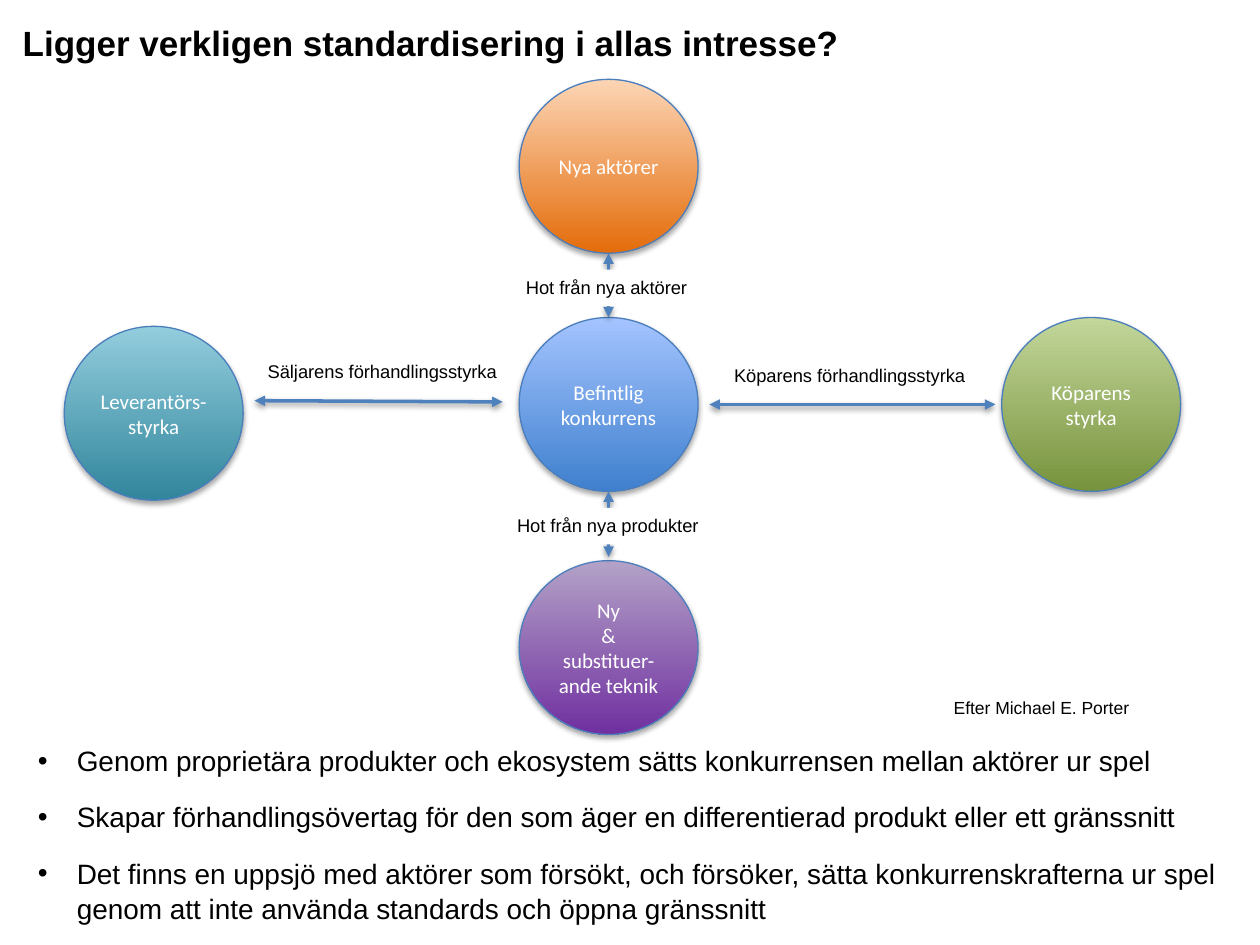
import pptx
import pptx.util
import pptx.oxml
import pptx.oxml.ns
import pptx.dml.color
import pptx.enum.shapes
import pptx.enum.text
import lxml.etree

HUES = {
    "ink": "000000", "white": "FFFFFF", "edge": "4B7EBC", "arrow": "4F81BD",
    "blue": ("A4C4FF", "3F80CE"), "green": ("C3D69B", "77933C"),
    "teal": ("93CDDD", "31859C"), "plum": ("B3A2C7", "7030A0"),
    "rust": ("FCD5B5", "E46C0A"),
}
COLS, ROWS = 100, 75
WIDE, HIGH = pptx.util.Inches(10), pptx.util.Inches(7.5)
CIRC = (14.2, 13.8)  # circle size in columns and rows

# Text formats
HEAD = {"name": "Arial", "size": 20, "bold": True, "hue": "ink"}
LIST = {"name": "Arial", "size": 16, "hue": "ink"}
NODE = {"name": "Calibri", "size": 12, "hue": "white"}
NOTE = {"name": "Arial", "size": 10.5, "hue": "ink"}
FINE = {**NOTE, "size": 10}

TOP = pptx.enum.text.MSO_ANCHOR.TOP
MID = pptx.enum.text.MSO_ANCHOR.MIDDLE
LEFT = pptx.enum.text.PP_ALIGN.LEFT
CENTER = pptx.enum.text.PP_ALIGN.CENTER
SHAPE = pptx.enum.shapes.MSO_SHAPE


def rgb(code):
    return pptx.dml.color.RGBColor.from_string(code)


def grid(col, row, *size):
    """Turn columns and rows into lengths."""
    pairs = zip((col, row, *size), (WIDE / COLS, HIGH / ROWS) * 2)
    return [round(count * unit) for count, unit in pairs]


def style(font, form):
    for key, value in form.items():
        if key == "hue":
            font.color.rgb = rgb(HUES[value])
        else:
            setattr(font, key, pptx.util.Pt(value) if key == "size" else value)


def write(shape, lines, form, align, anchor, pad=(0.1, 0.05)):
    frame = shape.text_frame
    frame.text = "\n".join(lines)
    sides = {"margin_left": pad[0], "margin_right": pad[0],
             "margin_top": pad[1], "margin_bottom": pad[1]}
    for key, value in sides.items():
        setattr(frame, key, pptx.util.Inches(value))
    frame.word_wrap = True
    frame.auto_size = pptx.enum.text.MSO_AUTO_SIZE.NONE
    frame.vertical_anchor = anchor
    for para in frame.paragraphs:
        para.alignment = align
        para.space_before = pptx.util.Pt(0)
        style(para.font, form)
    return frame.paragraphs


def place(shape, box):
    for key, value in zip(("left", "top", "width", "height"), grid(*box)):
        setattr(shape, key, value)


def shade(shape, alpha):
    """Add a soft shadow straight below."""
    props = shape._element.spPr
    for old in props.findall(pptx.oxml.ns.qn("a:effectLst")):
        props.remove(old)
    props.append(pptx.oxml.parse_xml(
        f'<a:effectLst {pptx.oxml.ns.nsdecls("a")}>'
        '<a:outerShdw blurRad="40000" dist="22000" dir="5400000" rotWithShape="0">'
        f'<a:srgbClr val="{HUES["ink"]}"><a:alpha val="{alpha * 1000}"/></a:srgbClr>'
        '</a:outerShdw></a:effectLst>'))


def node(slide, spot, hue, lines, pad):
    ball = slide.shapes.add_shape(SHAPE.OVAL, *grid(*spot, *CIRC))
    ball.fill.gradient()
    ball.fill.gradient_angle = 270
    for stop, code in zip(ball.fill.gradient_stops, HUES[hue]):
        stop.color.rgb = rgb(code)
    ball.line.color.rgb = rgb(HUES["edge"])
    ball.line.width = pptx.util.Pt(0.75)
    shade(ball, 35)
    write(ball, lines, NODE, CENTER, MID, pad)


def arrow(slide, start, end):
    link = slide.shapes.add_connector(
        pptx.enum.shapes.MSO_CONNECTOR.STRAIGHT, *grid(*start), *grid(*end))
    link.line.color.rgb = rgb(HUES["arrow"])
    link.line.width = pptx.util.Pt(2)
    line = link._element.spPr.find(pptx.oxml.ns.qn("a:ln"))
    for tag in ("a:headEnd", "a:tailEnd"):
        lxml.etree.SubElement(line, pptx.oxml.ns.qn(tag), type="triangle")
    shade(link, 38)


def label(slide, box, text, form):
    tag = slide.shapes.add_shape(SHAPE.RECTANGLE, *grid(*box))
    tag.shadow.inherit = False
    tag.fill.solid()
    tag.fill.fore_color.rgb = rgb(HUES["white"])
    tag.line.fill.background()
    write(tag, [text], form, CENTER, TOP)


def title(slide, box, text):
    head = slide.shapes.title
    place(head, box)
    write(head, [text], HEAD, LEFT, TOP)


def points(slide, box, lines):
    body = slide.placeholders[1]
    place(body, box)
    for rank, para in enumerate(write(body, lines, LIST, LEFT, TOP)):
        para.line_spacing = 1.05
        para.space_before = pptx.util.Pt(12 if rank else 0)
        props = para._p.get_or_add_pPr()
        props.set("marL", str(pptx.util.Inches(0.31)))
        props.set("indent", str(-pptx.util.Inches(0.31)))


def forces(slide, box):
    """Five circles in a cross, with arrows and labels between them."""
    left, top = box[:2]

    def at(col, row):
        return left + col, top + row

    mid, row = 36.1, 18.9
    axis = mid + CIRC[0] / 2

    # Circles
    for spot, hue, lines, pad in (
        ((mid, row), "blue", ["Befintlig konkurrens"], (0.1, 0.05)),
        ((74.4, row), "green", ["Köparens styrka"], (0.1, 0.05)),
        ((0, 19.6), "teal", ["Leverantörs- styrka"], (0.04, 0.05)),
        ((mid, 38.2), "plum", ["Ny", "&", "substituer-ande teknik"], (0, 0.04)),
        ((mid, 0), "rust", ["Nya aktörer"], (0, 0.04)),
    ):
        node(slide, at(*spot), hue, lines, pad)

    # Arrows
    for start, end in (
        ((axis, 37.9), (axis, row + CIRC[1])),
        ((axis, row), (axis, CIRC[1])),
        ((73.9, 25.8), (51.2, 25.8)),
        ((34.8, 25.6), (15.1, 25.5)),
    ):
        arrow(slide, at(*start), at(*end))

    # Labels
    for spot, wide, text, form in (
        ((27.6, 34), 31.1, "Hot från nya produkter", NOTE),
        ((27.5, 15.1), 31.1, "Hot från nya aktörer", NOTE),
        ((51.2, 22.1), 22.3, "Köparens förhandlingsstyrka", NOTE),
        ((14.6, 21.8), 21.3, "Säljarens förhandlingsstyrka", NOTE),
        ((66.4, 48.5), 22.3, "Efter Michael E. Porter", FINE),
    ):
        label(slide, (*at(*spot), wide, 2.9), text, form)


def main():
    deck = pptx.Presentation()
    deck.slide_width, deck.slide_height = WIDE, HIGH
    slide = deck.slides.add_slide(deck.slide_layouts[1])
    title(slide, (0.8, 1.2, 87.3, 8.5),
          "Ligger verkligen standardisering i allas intresse?")
    points(slide, (2, 58.4, 97.6, 16), [
        "Genom proprietära produkter och ekosystem sätts konkurrensen mellan aktörer ur spel",
        "Skapar förhandlingsövertag för den som äger en differentierad produkt eller ett gränssnitt",
        "Det finns en uppsjö med aktörer som försökt, och försöker, sätta konkurrenskrafterna "
        "ur spel genom att inte använda standards och öppna gränssnitt",
    ])
    forces(slide, (5.1, 6.3, 88.6, 52))
    deck.save("out.pptx")


if __name__ == "__main__":
    main()
